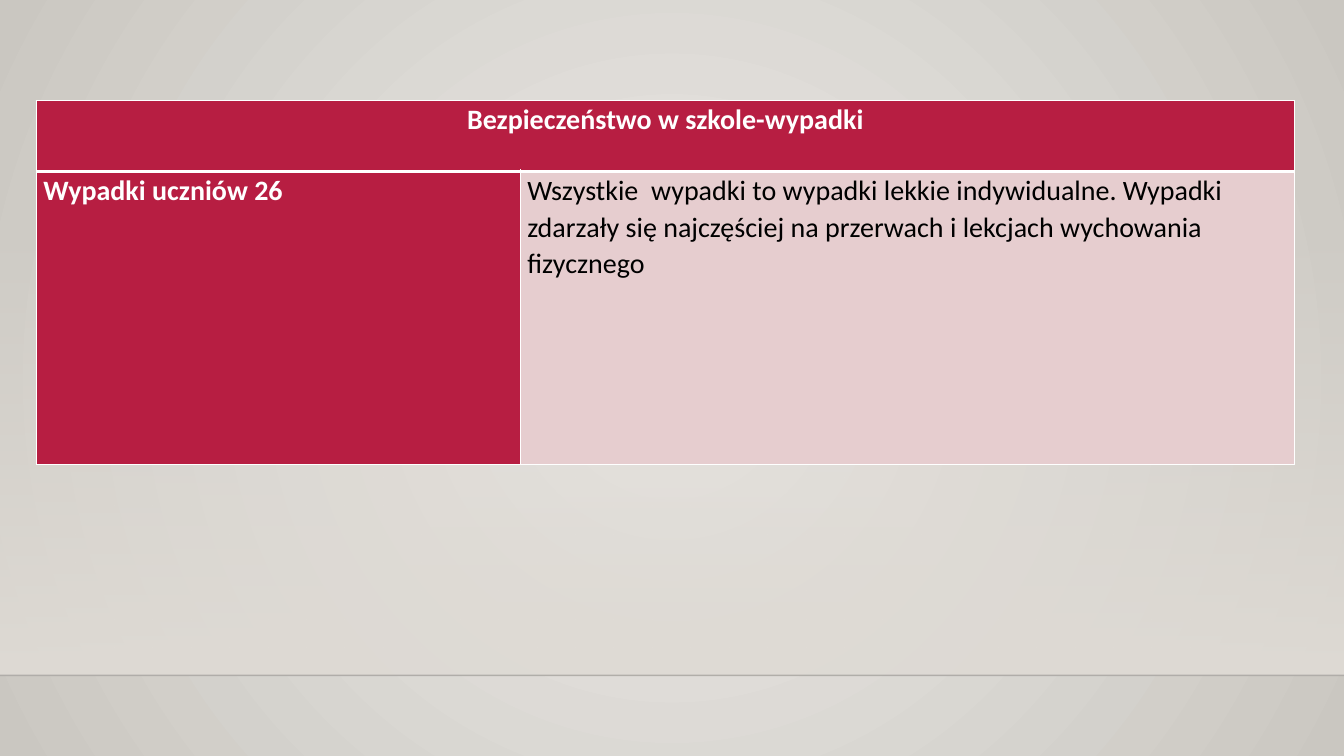
"""Build the slide on school safety and accidents."""
from lxml import etree
from pptx import Presentation
from pptx.dml.color import RGBColor
from pptx.enum.shapes import MSO_CONNECTOR, MSO_SHAPE
from pptx.enum.text import PP_ALIGN
from pptx.oxml.ns import qn
from pptx.util import Inches, Pt

LINE = MSO_CONNECTOR.STRAIGHT
RECT = MSO_SHAPE.RECTANGLE
LEFT, MID = PP_ALIGN.LEFT, PP_ALIGN.CENTER
HEX = {"light": "ECEAE7", "edge": "CAC7C1", "wall": "DFDBD5", "rule": "000001",
       "red": "B71E42", "pink": "E6CDCF", "white": "FFFFFF", "black": "000000"}
RGB = {name: RGBColor.from_string(code) for name, code in HEX.items()}


def add(node, tag, **attrs):
    return etree.SubElement(node, qn(tag), attrs)


def blend(fill, first, last):
    fill.gradient()
    for stop, name, place in zip(fill.gradient_stops, (first, last), (0, 1)):
        stop.color.rgb = RGB[name]
        stop.position = place


deck = Presentation()
deck.slide_width, deck.slide_height = Inches(13.33), Inches(7.5)
slide = deck.slides.add_slide(deck.slide_layouts[6])

blend(slide.background.fill, "light", "edge")
grad = slide.element.find(".//" + qn("a:gradFill"))
grad.remove(grad.find(qn("a:lin")))
ring = add(grad, "a:path", path="circle")
add(ring, "a:fillToRect", l="50000", t="50000", r="50000", b="50000")

wall = slide.shapes.add_shape(RECT, 0, Inches(2.21), Inches(13.33), Inches(4.49))
wall.shadow.inherit = False
wall.line.fill.background()
blend(wall.fill, "wall", "wall")
wall.fill.gradient_angle = 270
add(wall.element.find(".//" + qn("a:srgbClr")), "a:alpha", val="0")

rule = slide.shapes.add_connector(LINE, 0, Inches(6.7), Inches(13.33), Inches(6.7))
rule.line.width = Pt(1)
rule.line.color.rgb = RGB["rule"]
add(rule.element.find(".//" + qn("a:srgbClr")), "a:alpha", val="20000")
add(rule.element.spPr, "a:effectLst")

table = slide.shapes.add_table(2, 2, Inches(0.36), Inches(1), Inches(12.48), Inches(3.61)).table
for col, width in zip(table.columns, (4.8, 7.68)):
    col.width = Inches(width)
for row, height in zip(table.rows, (0.7, 2.91)):
    row.height = Inches(height)
table.cell(0, 0).merge(table.cell(0, 1))

cells = [
    (0, 0, "Bezpieczeństwo w szkole-wypadki", "red", "white", True, MID),
    (0, 1, "", "red", "white", True, MID),
    (1, 0, "Wypadki uczniów 26", "red", "white", True, LEFT),
    (1, 1, "Wszystkie  wypadki to wypadki lekkie indywidualne. Wypadki zdarzały się "
           "najczęściej na przerwach i lekcjach wychowania fizycznego",
     "pink", "black", False, LEFT),
]
pads = {"margin_left": Inches(0.07), "margin_right": Inches(0.07),
        "margin_top": 0, "margin_bottom": 0}
for row, col, text, fill, ink, bold, align in cells:
    cell = table.cell(row, col)
    for key, value in pads.items():
        setattr(cell, key, value)
    props = cell._tc.get_or_add_tcPr()
    for side in "LRTB":
        thick = (row, side) in ((0, "B"), (1, "T"))
        edge = add(props, "a:ln" + side, w=str(Pt(3 if thick else 1)))
        add(add(edge, "a:solidFill"), "a:srgbClr", val=HEX["white"])
    cell.fill.solid()
    cell.fill.fore_color.rgb = RGB[fill]
    if text:
        cell.text = text
        para = cell.text_frame.paragraphs[0]
        looks = {"alignment": align, "line_spacing": 1.07, "space_after": Pt(8)}
        for key, value in looks.items():
            setattr(para, key, value)
        font = para.runs[0].font
        for key, value in {"name": "Calibri", "size": Pt(20), "bold": bold}.items():
            setattr(font, key, value)
        font.color.rgb = RGB[ink]

deck.save("out.pptx")
